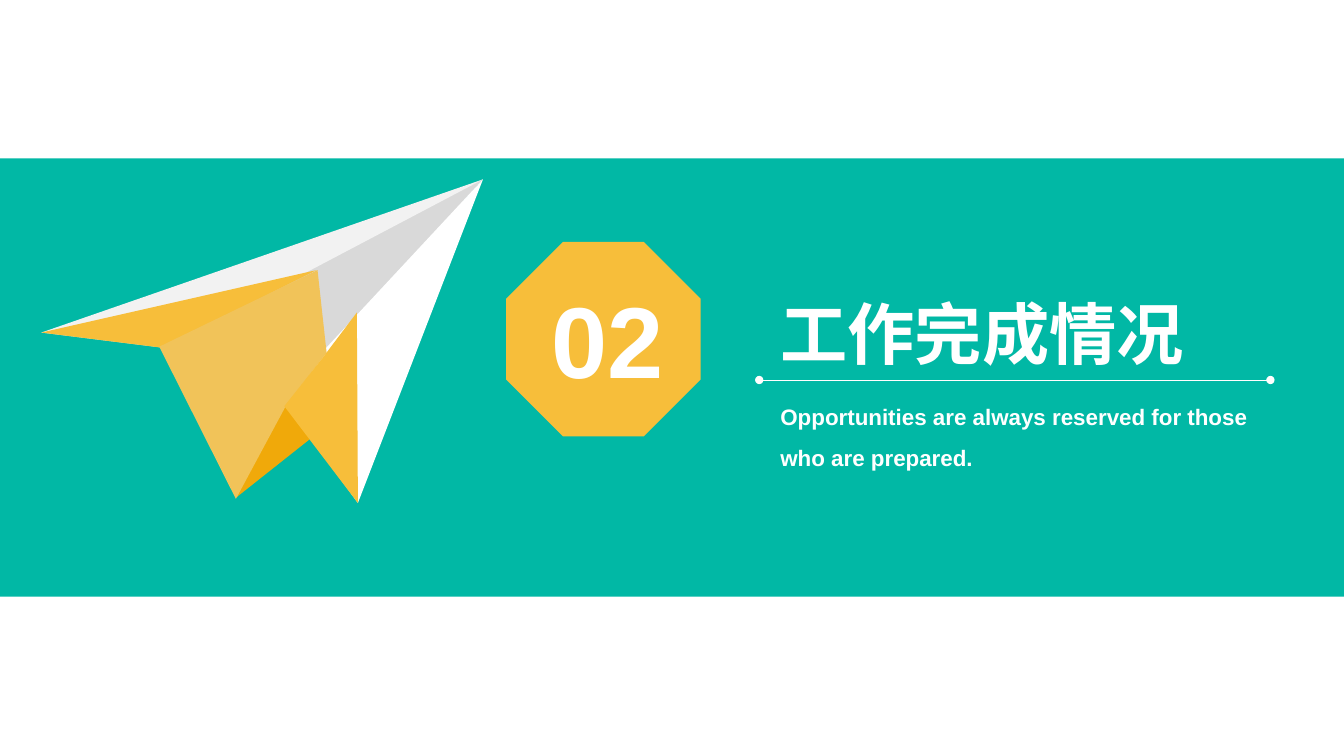
from lxml.etree import SubElement
from pptx import Presentation
from pptx.dml.color import RGBColor
from pptx.enum.shapes import MSO_CONNECTOR, MSO_SHAPE
from pptx.enum.text import MSO_ANCHOR, MSO_AUTO_SIZE, PP_ALIGN
from pptx.oxml.ns import qn
from pptx.util import Inches, Pt

TEAL = RGBColor(0x01, 0xB8, 0xA5)
AMBER = RGBColor(0xF7, 0xBE, 0x3A)
SAND = RGBColor(0xF1, 0xC3, 0x59)
DARK_AMBER = RGBColor(0xF0, 0xA9, 0x0A)
WHITE = RGBColor(0xFF, 0xFF, 0xFF)
PALE_GREY = RGBColor(0xF2, 0xF2, 0xF2)
GREY = RGBColor(0xD9, 0xD9, 0xD9)

FONT = "Arial"
WIDTH, HEIGHT = 13.33, 7.5
NUMBER = "02"
TITLE = "工作完成情况"
SUBTITLE = "Opportunities are always reserved for those who are prepared."

BAND = (0, 1.57, WIDTH, 4.35)
BADGE = (5.02, 2.4, 1.93, 1.93)
NUMBER_BOX = (5.37, 2.71, 1.32, 1.31)
TEXT_LEFT = 7.64
TITLE_BOX = (TEXT_LEFT, 2.85, 4.24, 0.91)
SUBTITLE_BOX = (TEXT_LEFT, 3.82, 5.08, 0.87)
RULE_LEFT, RULE_RIGHT, RULE_Y = 7.53, 12.6, 3.77

NOSE = (4.79, 1.78)
LEFT_TIP = (0.41, 3.3)
KEEL = (2.35, 4.93)
RIGHT_TIP = (3.55, 4.99)
PLANE = [
    (GREY, [NOSE, (1.56, 3.35), KEEL, (2.84, 3.95)]),
    (DARK_AMBER, [(2.84, 3.95), KEEL, (3.12, 4.32)]),
    (WHITE, [NOSE, (2.78, 3.94), RIGHT_TIP]),
    (PALE_GREY, [NOSE, LEFT_TIP, (1.62, 3.45)]),
    (AMBER, [(1.61, 3.45), (3.14, 2.68), LEFT_TIP]),
    (SAND, [(1.58, 3.44), (3.15, 2.68), (3.24, 3.5), (2.84, 4.02), (2.34, 4.95)]),
    (AMBER, [(2.82, 4.03), (3.2, 3.55), (3.54, 3.1), RIGHT_TIP]),
]


def paint(sp, color):
    sp.shadow.inherit = False
    sp.fill.solid()
    sp.fill.fore_color.rgb = color
    sp.line.fill.background()


def add_preset(shapes, kind, box, color):
    paint(shapes.add_shape(kind, *map(Inches, box)), color)


def add_facet(shapes, color, points):
    start, *rest = [(Inches(x), Inches(y)) for x, y in points]
    builder = shapes.build_freeform(*start)
    builder.add_line_segments(rest, close=True)
    paint(builder.convert_to_shape(), color)


def add_rule(shapes):
    line = shapes.add_connector(
        MSO_CONNECTOR.STRAIGHT,
        *map(Inches, (RULE_LEFT, RULE_Y, RULE_RIGHT, RULE_Y)))
    line.line.color.rgb = WHITE
    line.line.width = Pt(0.5)
    ln = line.line._get_or_add_ln()
    for end in ("a:headEnd", "a:tailEnd"):
        SubElement(ln, qn(end), type="oval")
    SubElement(line._element.spPr, qn("a:effectLst"))


def set_text(sp, box, text, size, align=PP_ALIGN.LEFT, spacing=1.0, wrap=False):
    sp.left, sp.top, sp.width, sp.height = map(Inches, box)
    tf = sp.text_frame
    tf.text = text
    tf.word_wrap = wrap
    tf.auto_size = MSO_AUTO_SIZE.NONE
    tf.vertical_anchor = MSO_ANCHOR.TOP
    p = tf.paragraphs[0]
    p.alignment = align
    p.line_spacing = spacing
    p.space_before = Pt(0)
    font = p.runs[0].font
    font.name, font.size, font.bold = FONT, Pt(size), True
    font.color.rgb = WHITE


def main():
    prs = Presentation()
    prs.slide_width, prs.slide_height = Inches(WIDTH), Inches(HEIGHT)
    s = prs.slides.add_slide(prs.slide_layouts[0])
    shapes = s.shapes
    title, subtitle = s.placeholders

    add_preset(shapes, MSO_SHAPE.RECTANGLE, BAND, TEAL)
    for color, points in PLANE:
        add_facet(shapes, color, points)
    add_preset(shapes, MSO_SHAPE.OCTAGON, BADGE, AMBER)
    number = shapes.add_textbox(*map(Inches, NUMBER_BOX))
    set_text(number, NUMBER_BOX, NUMBER, 72, align=PP_ALIGN.CENTER)
    add_rule(shapes)

    set_text(title, TITLE_BOX, TITLE, 48)
    set_text(subtitle, SUBTITLE_BOX, SUBTITLE, 16, spacing=1.5, wrap=True)
    for sp in (title, subtitle):
        shapes._spTree.append(sp._element)

    prs.save("out.pptx")


if __name__ == "__main__":
    main()
